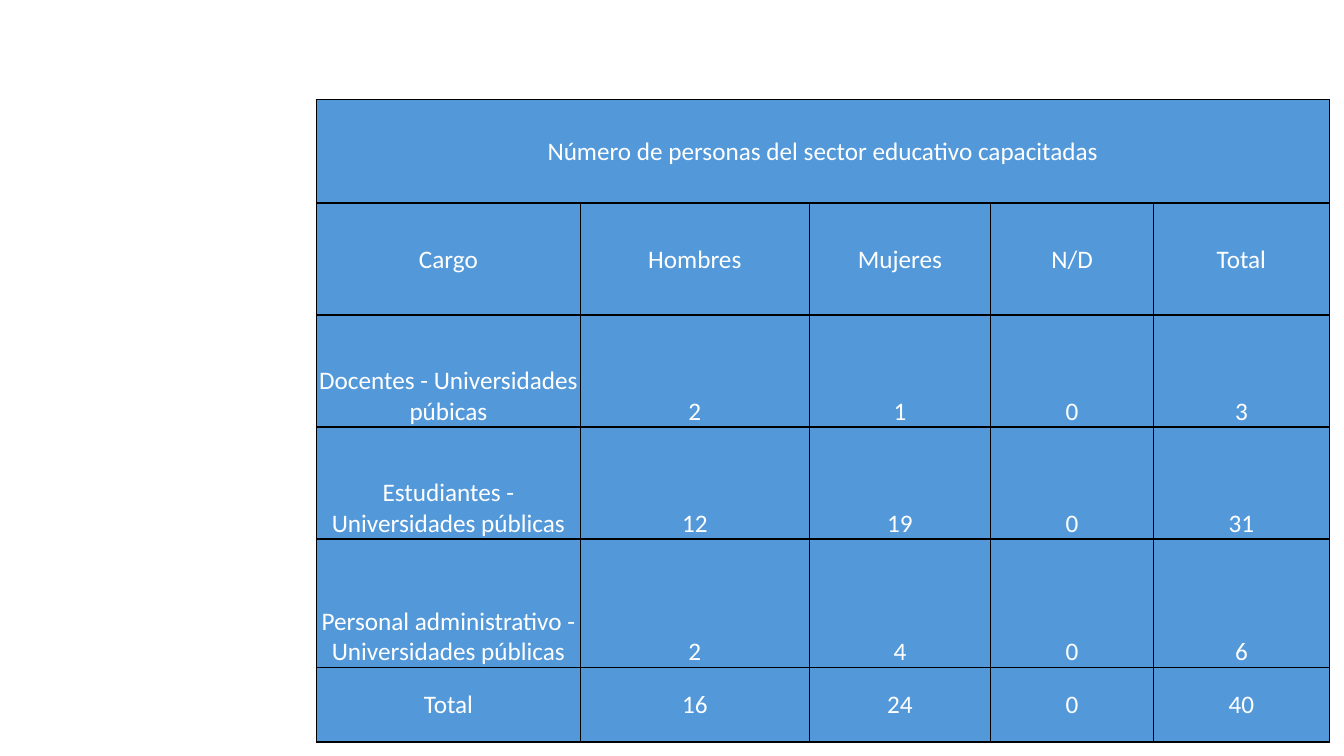
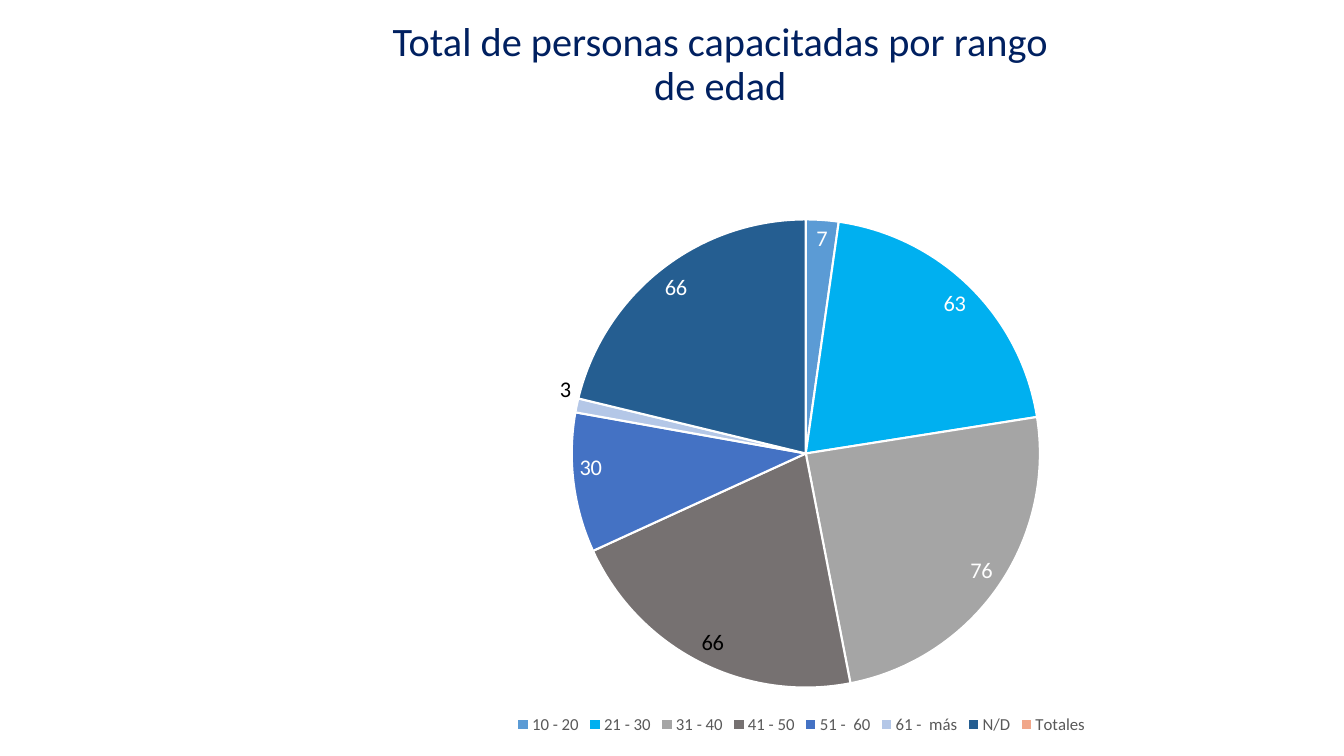
import pptx
import pptx.chart.data
import pptx.dml.color
import pptx.enum.chart
import pptx.enum.text
import pptx.oxml
import pptx.oxml.ns
import pptx.util
from dataclasses import dataclass

Pt = pptx.util.Pt
ANCHOR = pptx.enum.text.MSO_ANCHOR
CENTER = pptx.enum.text.PP_ALIGN.CENTER
LABEL_AT = pptx.enum.chart.XL_LABEL_POSITION


@dataclass(frozen=True)
class Theme:
    font: str = "Calibri"
    white: str = "FFFFFF"
    black: str = "000000"
    navy: str = "002060"
    legend_grey: str = "595959"
    table_blue: str = "5399DA"
    title_size: float = 28.8
    cell_size: float = 18
    value_size: float = 16
    legend_size: float = 12
    chart_size: float = 10


THEME = Theme()

# Content: people trained, by role
ROLE_HEADING = "Número de personas del sector educativo capacitadas"
ROLE_ROWS = [
    ("Cargo", "Hombres", "Mujeres", "N/D", "Total"),
    ("Docentes - Universidades púbicas", "2", "1", "0", "3"),
    ("Estudiantes - Universidades públicas", "12", "19", "0", "31"),
    ("Personal administrativo - Universidades públicas", "2", "4", "0", "6"),
    ("Total", "16", "24", "0", "40"),
]
ROLE_WIDTHS = (188.6, 163.5, 129.5, 116.5, 125.4)
ROLE_HEIGHTS = (74, 80, 80, 80, 92, 53)
BOTTOM_ROWS = range(2, 5)

# Content: people trained, by age range (label, people, slice colour)
AGE_TITLE = "Total de personas capacitadas por rango de edad"
AGES = [
    ("10 - 20", 7, "5B9BD5"),
    ("21 - 30", 63, "00B0F0"),
    ("31 - 40", 76, "A5A5A5"),
    ("41 - 50", 66, "767171"),
    ("51 -  60", 30, "4472C4"),
    ("61 -  más", 3, "B4C7E7"),
    ("N/D", 66, "255E91"),
    ("Totales", None, "F1A78A"),
]
DARK_LABELS = {3: LABEL_AT.INSIDE_END, 5: LABEL_AT.OUTSIDE_END}
PIE_AREA = {"x": 0.24, "y": 0.08, "w": 0.53, "h": 0.83}


def rgb(colour):
    return pptx.dml.color.RGBColor.from_string(colour)


def set_font(font, size, colour):
    font.name, font.size, font.bold = THEME.font, Pt(size), False
    font.color.rgb = rgb(colour)


def style_cell(cell, anchor):
    cell.fill.solid()
    cell.fill.fore_color.rgb = rgb(THEME.table_blue)
    cell.vertical_anchor = anchor
    cell.margin_left = cell.margin_right = cell.margin_top = Pt(0.7)
    cell.margin_bottom = 0
    paragraph = cell.text_frame.paragraphs[0]
    paragraph.alignment = CENTER
    set_font(paragraph.font, THEME.cell_size, THEME.white)
    # Borders come before the fill in the cell properties
    properties = cell._tc.get_or_add_tcPr()
    for place, side in enumerate("LRTB"):
        properties.insert(place, pptx.oxml.parse_xml(
            f'<a:ln{side} {pptx.oxml.ns.nsdecls("a")} w="{Pt(1)}"><a:solidFill>'
            f'<a:srgbClr val="{THEME.black}"/></a:solidFill></a:ln{side}>'))


def add_role_table(slide):
    table = slide.shapes.add_table(
        len(ROLE_HEIGHTS), len(ROLE_WIDTHS), Pt(226), Pt(71),
        Pt(sum(ROLE_WIDTHS)), Pt(sum(ROLE_HEIGHTS))).table
    table.first_row = table.horz_banding = False
    for column, width in zip(table.columns, ROLE_WIDTHS):
        column.width = Pt(width)
    for row, height in zip(table.rows, ROLE_HEIGHTS):
        row.height = Pt(height)

    table.cell(0, 0).merge(table.cell(0, len(ROLE_WIDTHS) - 1))
    table.cell(0, 0).text = ROLE_HEADING
    for r, texts in enumerate(ROLE_ROWS, start=1):
        for c, text in enumerate(texts):
            table.cell(r, c).text = text
    for r, row in enumerate(table.rows):
        for cell in row.cells:
            style_cell(cell, ANCHOR.BOTTOM if r in BOTTOM_ROWS else ANCHOR.MIDDLE)


def add_title(slide, text):
    frame = slide.shapes.add_textbox(Pt(272), Pt(12), Pt(485), Pt(88)).text_frame
    frame.word_wrap = True
    frame.vertical_anchor = ANCHOR.TOP
    paragraph = frame.paragraphs[0]
    paragraph.text = text
    paragraph.alignment = CENTER
    paragraph.line_spacing = 0.9
    set_font(paragraph.font, THEME.title_size, THEME.navy)


def add_age_pie(slide):
    labels, people, colours = zip(*AGES)
    data = pptx.chart.data.CategoryChartData()
    data.categories = labels
    data.add_series("Series 1", people)
    chart = slide.shapes.add_chart(
        pptx.enum.chart.XL_CHART_TYPE.PIE,
        Pt(257), Pt(124.5), Pt(631), Pt(403), data).chart
    chart.has_title = False
    set_font(chart.font, THEME.chart_size, THEME.black)

    # Legend
    chart.has_legend = True
    chart.legend.position = pptx.enum.chart.XL_LEGEND_POSITION.BOTTOM
    chart.legend.include_in_layout = False
    set_font(chart.legend.font, THEME.legend_size, THEME.legend_grey)

    # Slices and their values
    pie = chart.plots[0]
    pie.vary_by_categories = True
    ages = pie.series[0]
    values = ages.data_labels
    values.show_value = True
    values.position = LABEL_AT.INSIDE_END
    set_font(values.font, THEME.value_size, THEME.white)
    for i, colour in enumerate(colours):
        portion = ages.points[i].format
        portion.fill.solid()
        portion.fill.fore_color.rgb = rgb(colour)
        portion.line.color.rgb = rgb(THEME.white)
        portion.line.width = Pt(1.5)
    for i, position in DARK_LABELS.items():
        label = ages.points[i].data_label
        set_font(label.font, THEME.value_size, THEME.black)
        label.position = position

    # Fixed area for the pie
    plot_area = chart._chartSpace.chart.plotArea
    for layout in plot_area.findall(pptx.oxml.ns.qn("c:layout")):
        plot_area.remove(layout)
    sizes = "".join(f'<c:{k} val="{v}"/>' for k, v in PIE_AREA.items())
    plot_area.insert(0, pptx.oxml.parse_xml(
        f'<c:layout {pptx.oxml.ns.nsdecls("c")}><c:manualLayout>'
        '<c:layoutTarget val="inner"/><c:xMode val="edge"/><c:yMode val="edge"/>'
        f'{sizes}</c:manualLayout></c:layout>'))


def main():
    deck = pptx.Presentation()
    deck.slide_width, deck.slide_height = Pt(960), Pt(540)
    blank = deck.slide_layouts[6]
    add_role_table(deck.slides.add_slide(blank))
    age_slide = deck.slides.add_slide(blank)
    add_title(age_slide, AGE_TITLE)
    add_age_pie(age_slide)
    deck.save("out.pptx")


if __name__ == "__main__":
    main()
